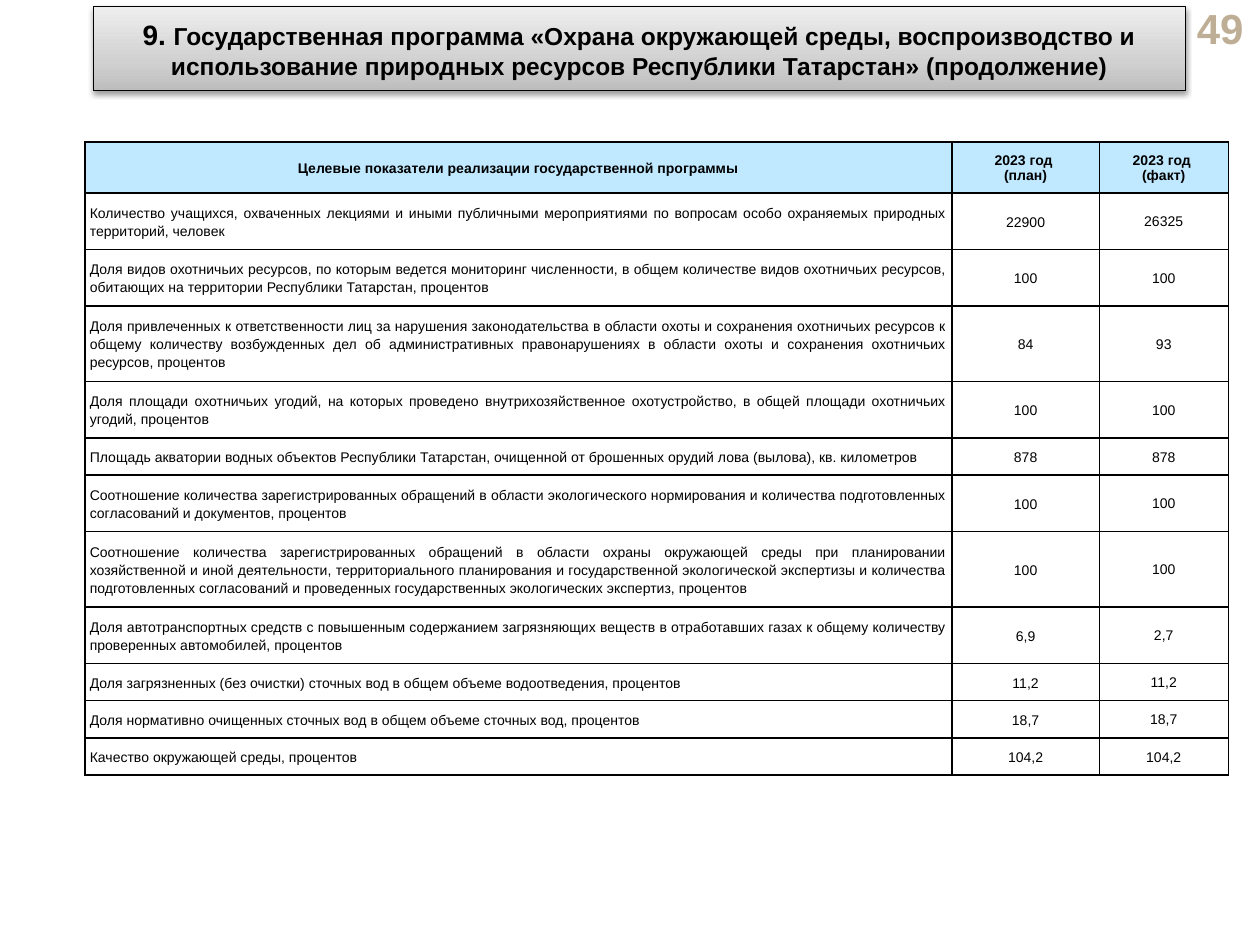
from copy import deepcopy
from dataclasses import dataclass

from pptx import Presentation
from pptx.dml.color import RGBColor
from pptx.enum.text import MSO_ANCHOR, MSO_AUTO_SIZE, PP_ALIGN
from pptx.oxml import parse_xml
from pptx.oxml.ns import nsdecls, qn
from pptx.util import Cm, Pt

CENTER, JUSTIFY, RIGHT = PP_ALIGN.CENTER, PP_ALIGN.JUSTIFY, PP_ALIGN.RIGHT
MIDDLE = MSO_ANCHOR.MIDDLE
NO_AUTOSIZE = MSO_AUTO_SIZE.NONE
TITLE_ONLY_LAYOUT = 5


@dataclass(frozen=True)
class Theme:
    font: str = "Arial"
    ink: str = "000000"
    page_number: str = "BFAE96"
    header_fill: str = "C0E9FF"
    banner_stops: tuple = ((0, "BDBDBD"), (35, "D1D1D1"), (100, "EEEEEE"))
    number_size: float = 16
    title_size: float = 14
    page_size: float = 24
    table_size: float = 8
    border_width: float = 1


@dataclass(frozen=True)
class Indicator:
    name: str
    plan: str
    fact: str
    lines: int  # lines the name takes in its column


@dataclass(frozen=True)
class CellFormat:
    align: PP_ALIGN
    margins: tuple  # left, top, right, bottom in cm
    spacing: float = 1.0
    bold: bool = False
    fill: str = ""


THEME = Theme()
HEADER = CellFormat(CENTER, (0.1, 0.03, 0.1, 0), bold=True, fill=THEME.header_fill)
BODY_FORMATS = (
    CellFormat(JUSTIFY, (0.1, 0.18, 0.1, 0.18), spacing=1.15),
    CellFormat(CENTER, (0.1, 0.18, 0.1, 0.18), spacing=1.15),
    CellFormat(CENTER, (0.03, 0.03, 0.03, 0)),
)
COLUMN_WIDTHS = (17.48, 2.97, 2.6)
HEADER_HEIGHT = 1.03
LINE_HEIGHT = 0.375
HEADINGS = (
    "Целевые показатели реализации государственной программы",
    "2023 год \n(план)",
    "2023 год \n(факт)",
)
INDICATORS = (
    Indicator("Количество учащихся, охваченных лекциями и иными публичными мероприятиями по вопросам "
              "особо охраняемых природных территорий, человек", "22900", "26325", 2),
    Indicator("Доля видов охотничьих ресурсов, по которым ведется мониторинг численности, в общем "
              "количестве видов охотничьих ресурсов, обитающих на территории Республики Татарстан, "
              "процентов", "100", "100", 2),
    Indicator("Доля привлеченных к ответственности лиц за нарушения законодательства в области охоты "
              "и сохранения охотничьих ресурсов к общему количеству возбужденных дел об "
              "административных правонарушениях в области охоты и сохранения охотничьих ресурсов, "
              "процентов", "84", "93", 3),
    Indicator("Доля площади охотничьих угодий, на которых проведено внутрихозяйственное "
              "охотустройство, в общей площади охотничьих угодий, процентов", "100", "100", 2),
    Indicator("Площадь акватории водных объектов Республики Татарстан, очищенной от брошенных "
              "орудий лова (вылова), кв. километров", "878", "878", 1),
    Indicator("Соотношение количества зарегистрированных обращений в области экологического "
              "нормирования и количества подготовленных согласований и документов, процентов",
              "100", "100", 2),
    Indicator("Соотношение количества зарегистрированных обращений в области охраны окружающей "
              "среды при планировании хозяйственной и иной деятельности, территориального "
              "планирования и государственной экологической экспертизы и количества подготовленных "
              "согласований и проведенных государственных экологических экспертиз, процентов",
              "100", "100", 3),
    Indicator("Доля автотранспортных средств с повышенным содержанием загрязняющих веществ в "
              "отработавших газах к общему количеству проверенных автомобилей, процентов",
              "6,9", "2,7", 2),
    Indicator("Доля загрязненных (без очистки) сточных вод в общем объеме водоотведения, процентов",
              "11,2", "11,2", 1),
    Indicator("Доля нормативно очищенных сточных вод в общем объеме сточных вод, процентов",
              "18,7", "18,7", 1),
    Indicator("Качество окружающей среды, процентов", "104,2", "104,2", 1),
)


def write(paragraph, text: str, *, size: float, bold: bool = False, color: str = THEME.ink,
          align: PP_ALIGN = CENTER, spacing: float = 1.0) -> None:
    """Add text to a paragraph; a newline becomes a line break."""
    paragraph.alignment = align
    paragraph.line_spacing = spacing
    for index, line in enumerate(text.split("\n")):
        if index:
            paragraph.add_line_break()
        run = paragraph.add_run()
        run.text = line
        run.font.name, run.font.size, run.font.bold = THEME.font, Pt(size), bold
        run.font.color.rgb = RGBColor.from_string(color)
    # Line breaks take the size of the text around them
    for line_break in paragraph._p.findall(qn("a:br")):
        line_break.insert(0, deepcopy(run.font._element))


def add_banner(slide) -> None:
    banner = slide.shapes.title
    banner.left, banner.top, banner.width, banner.height = Cm(1.88), Cm(0.13), Cm(22.02), Cm(1.7)
    stops = "".join(f'<a:gs pos="{position * 1000}"><a:srgbClr val="{color}"/></a:gs>'
                    for position, color in THEME.banner_stops)
    properties = banner._element.spPr
    for xml in (
        f'<a:prstGeom {nsdecls("a")} prst="roundRect"><a:avLst/></a:prstGeom>',
        f'<a:gradFill {nsdecls("a")} rotWithShape="1"><a:gsLst>{stops}</a:gsLst>'
        '<a:lin ang="16200000" scaled="0"/></a:gradFill>',
        f'<a:effectLst {nsdecls("a")}><a:outerShdw blurRad="{Pt(3.1)}" dist="{Pt(1.6)}" '
        f'dir="5400000" rotWithShape="0"><a:srgbClr val="{THEME.ink}"><a:alpha val="38000"/>'
        '</a:srgbClr></a:outerShdw></a:effectLst>',
    ):
        properties.append(parse_xml(xml))
    banner.line.color.rgb = RGBColor.from_string(THEME.ink)
    banner.line.width = Pt(0.75)

    frame = banner.text_frame
    frame.auto_size, frame.word_wrap, frame.vertical_anchor = NO_AUTOSIZE, True, MIDDLE
    write(frame.paragraphs[0], "9. ", size=THEME.number_size, bold=True)
    write(frame.paragraphs[0],
          "Государственная программа «Охрана окружающей среды, воспроизводство и использование "
          "природных ресурсов Республики Татарстан» (продолжение)", size=THEME.title_size, bold=True)


def add_page_number(slide) -> None:
    frame = slide.shapes.add_textbox(Cm(23.7), Cm(0.13), Cm(1.62), Cm(0.86)).text_frame
    frame.word_wrap, frame.vertical_anchor = True, MIDDLE
    write(frame.paragraphs[0], "49", size=THEME.page_size, bold=True,
          color=THEME.page_number, align=RIGHT)


def fill_cell(cell, text: str, style: CellFormat) -> None:
    write(cell.text_frame.paragraphs[0], text, size=THEME.table_size, bold=style.bold,
          align=style.align, spacing=style.spacing)
    cell.vertical_anchor = MIDDLE
    cell.margin_left, cell.margin_top, cell.margin_right, cell.margin_bottom = map(Cm, style.margins)
    if style.fill:
        cell.fill.solid()
        cell.fill.fore_color.rgb = RGBColor.from_string(style.fill)
    else:
        cell.fill.background()
    # Borders precede the fill in the cell properties
    for index, side in enumerate(("lnL", "lnR", "lnT", "lnB")):
        cell._tc.get_or_add_tcPr().insert(index, parse_xml(
            f'<a:{side} {nsdecls("a")} w="{Pt(THEME.border_width)}"><a:solidFill>'
            f'<a:srgbClr val="{THEME.ink}"/></a:solidFill></a:{side}>'))


def add_indicator_table(slide) -> None:
    heights = [HEADER_HEIGHT] + [LINE_HEIGHT * (item.lines + 1) for item in INDICATORS]
    table = slide.shapes.add_table(len(heights), len(COLUMN_WIDTHS), Cm(1.71), Cm(2.86),
                                   Cm(sum(COLUMN_WIDTHS)), Cm(sum(heights))).table
    table.first_row = table.horz_banding = False
    for column, width in zip(table.columns, COLUMN_WIDTHS):
        column.width = Cm(width)
    for row, height in zip(table.rows, heights):
        row.height = Cm(height)

    for column, heading in enumerate(HEADINGS):
        fill_cell(table.cell(0, column), heading, HEADER)
    for row, item in enumerate(INDICATORS, start=1):
        for column, text in enumerate((item.name, item.plan, item.fact)):
            fill_cell(table.cell(row, column), text, BODY_FORMATS[column])


def main() -> None:
    presentation = Presentation()
    presentation.slide_width, presentation.slide_height = Cm(25.4), Cm(19.05)
    slide = presentation.slides.add_slide(presentation.slide_layouts[TITLE_ONLY_LAYOUT])
    add_page_number(slide)
    add_indicator_table(slide)
    add_banner(slide)
    presentation.save("out.pptx")


if __name__ == "__main__":
    main()
